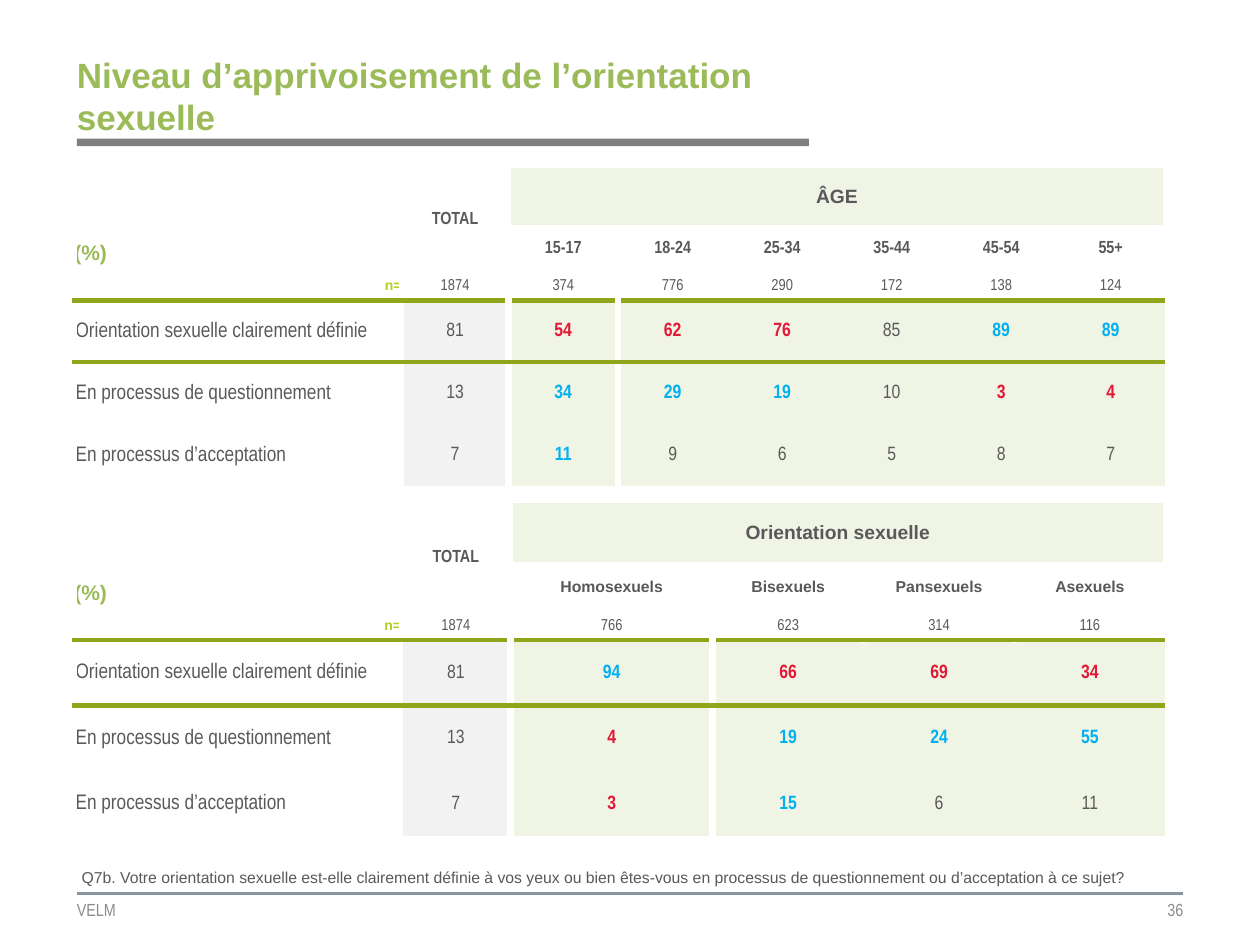
from lxml import etree
from pptx import Presentation
from pptx import util as u
from pptx.dml.color import RGBColor
from pptx.enum import shapes, text
from pptx.oxml import ns

WIDTH, HEIGHT = u.Inches(10), u.Inches(7.5)
COLUMN, ROW = WIDTH / 100, HEIGHT / 75
GREY, GREEN, LIME, RULE = "595959", "9BBB59", "B5CC22", "91A51B"
PALE, SILVER, WHITE, MUTED = "EFF4E4", "F2F2F2", "FFFFFF", "8C8C8C"
MARKS = {"+": "00B0F0", "-": "E31836"}
NARROW, SANS = "Arial Narrow", "Arial"
NO_STYLE = "{2D5ABB26-0587-4C30-8999-92F81FD0307C}"
LEFT, CENTER, RIGHT = text.PP_ALIGN.LEFT, text.PP_ALIGN.CENTER, text.PP_ALIGN.RIGHT
MIDDLE, BOTTOM = text.MSO_ANCHOR.MIDDLE, text.MSO_ANCHOR.BOTTOM
TOP = text.MSO_ANCHOR.TOP
LABELS = [
    "Orientation sexuelle clairement définie",
    "En processus de questionnement",
    "En processus d’acceptation",
]
TOTALS = ["81", "13", "7"]


def color(value):
    return RGBColor.from_string(value)


def grid(left, top, width, height):
    return [round(n) for n in (left * COLUMN, top * ROW, width * COLUMN, height * ROW)]


def write(paragraph, words, size, font=NARROW, ink=GREY, bold=False, align=LEFT):
    paragraph.text = words
    paragraph.alignment = align
    paragraph.font.size = u.Pt(size)
    paragraph.font.name = font
    paragraph.font.bold = bold
    paragraph.font.color.rgb = color(ink)


def text_box(slide, box, words, size, anchor=MIDDLE, inset=0, **style):
    frame = slide.shapes.add_textbox(*box).text_frame
    frame.word_wrap = True
    frame.vertical_anchor = anchor
    frame.margin_left = frame.margin_right = u.Inches(inset)
    frame.margin_top = frame.margin_bottom = u.Inches(inset / 2)
    write(frame.paragraphs[0], words, size, **style)


def border(cell, **edges):
    properties = cell._tc.get_or_add_tcPr()
    for side in "LRTB":
        if side in edges:
            ink, points = edges[side]
            line = etree.SubElement(properties, ns.qn(f"a:ln{side}"), w=str(u.Pt(points)))
            fill = etree.SubElement(line, ns.qn("a:solidFill"))
            etree.SubElement(fill, ns.qn("a:srgbClr"), val=ink)


def fill_cell(cell, words, size, fill=None, anchor=MIDDLE, edges=None, **style):
    style.setdefault("align", CENTER)
    border(cell, **(edges or {}))
    if fill:
        cell.fill.solid()
        cell.fill.fore_color.rgb = color(fill)
    else:
        cell.fill.background()
    cell.vertical_anchor = anchor
    cell.margin_left = cell.margin_top = cell.margin_right = u.Inches(0.01)
    cell.margin_bottom = 0
    write(cell.text_frame.paragraphs[0], words, size, **style)


def fill_corner(cell, words, size, ink, **options):
    fill_cell(cell, words, size, font=SANS, ink=ink, bold=True, **options)
    cell.margin_left = cell.margin_right = 0
    cell.margin_top = cell.margin_bottom = u.Inches(0.05)
    cell.text_frame.paragraphs[0].line_spacing = 0.95


def shrink_empty(table):
    for cell in table.iter_cells():
        if not cell.text_frame.text:
            cell.margin_top = cell.margin_bottom = 0
            paragraph = cell.text_frame.paragraphs[0]._p
            etree.SubElement(paragraph, ns.qn("a:endParaRPr"), sz="600")


def share(parts, weights, attribute, length):
    for part, weight in zip(parts, weights):
        setattr(part, attribute, round(length * weight / sum(weights)))


def result_table(slide, box, group, heads, head_style, counts, values, widths, heights):
    frame = slide.shapes.add_table(len(heights), len(widths), *box)
    table = frame.table
    table.first_row = table.horz_banding = False
    table._tbl.tblPr.find(ns.qn("a:tableStyleId")).text = NO_STYLE
    share(table.columns, widths, "width", box[2])
    share(table.rows, heights, "height", box[3])

    thin, thick, rule = (WHITE, 3), (WHITE, 4.5), (RULE, 3)
    sides = {"L": thin, "R": thin}
    last = len(widths) - 1
    table.cell(0, 1).merge(table.cell(2, 1))
    table.cell(0, 2).merge(table.cell(1, last))
    table.cell(1, 0).merge(table.cell(2, 0))

    fill_cell(table.cell(0, 0), "", 6, edges=sides)
    fill_cell(table.cell(0, 1), "TOTAL", 10, bold=True)
    fill_cell(table.cell(0, 2), group, 11, fill=PALE, font=SANS, bold=True, edges=sides)
    border(table.cell(0, last), R=thin)
    border(table.cell(1, last), R=thin)
    fill_corner(table.cell(1, 0), "(%)", 12, GREEN, anchor=BOTTOM, align=LEFT, edges=sides)
    fill_corner(table.cell(3, 0), "n=", 8, LIME, align=RIGHT, edges={**sides, "B": rule})
    for column, head in enumerate(heads, 2):
        fill_cell(table.cell(2, column), head, bold=True, **head_style)
    for column, count in enumerate(["1874"] + counts, 1):
        edges = {"L": thin, "B": rule}
        if column < last:
            edges["R"] = thin
        fill_cell(table.cell(3, column), count, 9, edges=edges)

    for row, (label, total, line) in enumerate(zip(LABELS, TOTALS, values), 4):
        top = {"T": rule} if row == 4 else {}
        fill_cell(table.cell(row, 0), label, 12, align=LEFT, edges={**sides, **top})
        fill_cell(table.cell(row, 1), total, 11, fill=SILVER,
                  edges={"L": thin, "R": thick, **top})
        for column, value in enumerate(line.split(), 2):
            edges = {"L": thick, **top} if column == 2 else top
            fill_cell(table.cell(row, column), value.lstrip("+-"), 11, fill=PALE,
                      ink=MARKS.get(value[0], GREY), bold=value[0] in MARKS, edges=edges)
    shrink_empty(table)


def header(slide, left, top, width, height):
    text_box(slide, grid(left, top, width, height),
             "Niveau d’apprivoisement de l’orientation sexuelle", 20,
             font=SANS, ink=GREEN, bold=True)
    bar = slide.shapes.add_shape(shapes.MSO_SHAPE.RECTANGLE,
                                 *grid(left, top + height, width, 0.6))
    bar.shadow.inherit = False
    bar.fill.solid()
    bar.fill.fore_color.rgb = color("7F7F7F")
    bar.line.fill.background()


def footer(slide, left, top, width, height):
    x, y, span, _ = grid(left, top, width, height)
    line = slide.shapes.add_connector(shapes.MSO_CONNECTOR.STRAIGHT, x, y, x + span, y)
    line.line.color.rgb = color("88959E")
    line.line.width = u.Pt(1.5)
    etree.SubElement(line._element.spPr, ns.qn("a:effectLst"))
    half = width / 2
    text_box(slide, grid(left, top, half, height), "VELM", 10, ink=MUTED)
    text_box(slide, grid(left + half, top, half, height), "36", 10, ink=MUTED, align=RIGHT)
    text_box(slide, grid(left - 0.6, top - 2.5, 85.5, 2.5),
             "Q7b. Votre orientation sexuelle est-elle clairement définie à vos yeux ou bien "
             "êtes-vous en processus de questionnement ou d’acceptation à ce sujet?",
             9, anchor=TOP, inset=0.1, font=SANS)


def main():
    presentation = Presentation()
    presentation.slide_width, presentation.slide_height = WIDTH, HEIGHT
    slide = presentation.slides.add_slide(presentation.slide_layouts[6])
    header(slide, 6.1, 4.1, 58.1, 6.9)
    result_table(
        slide, grid(5.9, 13.3, 86.6, 24.4), "ÂGE",
        ["15-17", "18-24", "25-34", "35-44", "45-54", "55+"], {"size": 10},
        ["374", "776", "290", "172", "138", "124"],
        ["-54 -62 -76 85 +89 +89", "+34 +29 +19 10 -3 -4", "+11 9 6 5 8 7"],
        [2.6, 0.85] + [0.87] * 6, [0.26, 0.12, 0.37, 0.21] + [0.49] * 3)
    result_table(
        slide, grid(5.9, 39.9, 86.6, 25.5), "Orientation sexuelle",
        ["Homosexuels", "Bisexuels", "Pansexuels", "Asexuels"], {"size": 9, "font": SANS},
        ["766", "623", "314", "116"],
        ["+94 -66 -69 -34", "-4 +19 +24 +55", "-3 +15 6 11"],
        [2.6, 0.87, 1.61] + [1.2] * 3, [0.27, 0.12, 0.39, 0.2] + [0.51] * 3)
    footer(slide, 6.1, 70.9, 87.8, 2.6)
    presentation.save("out.pptx")


if __name__ == "__main__":
    main()
